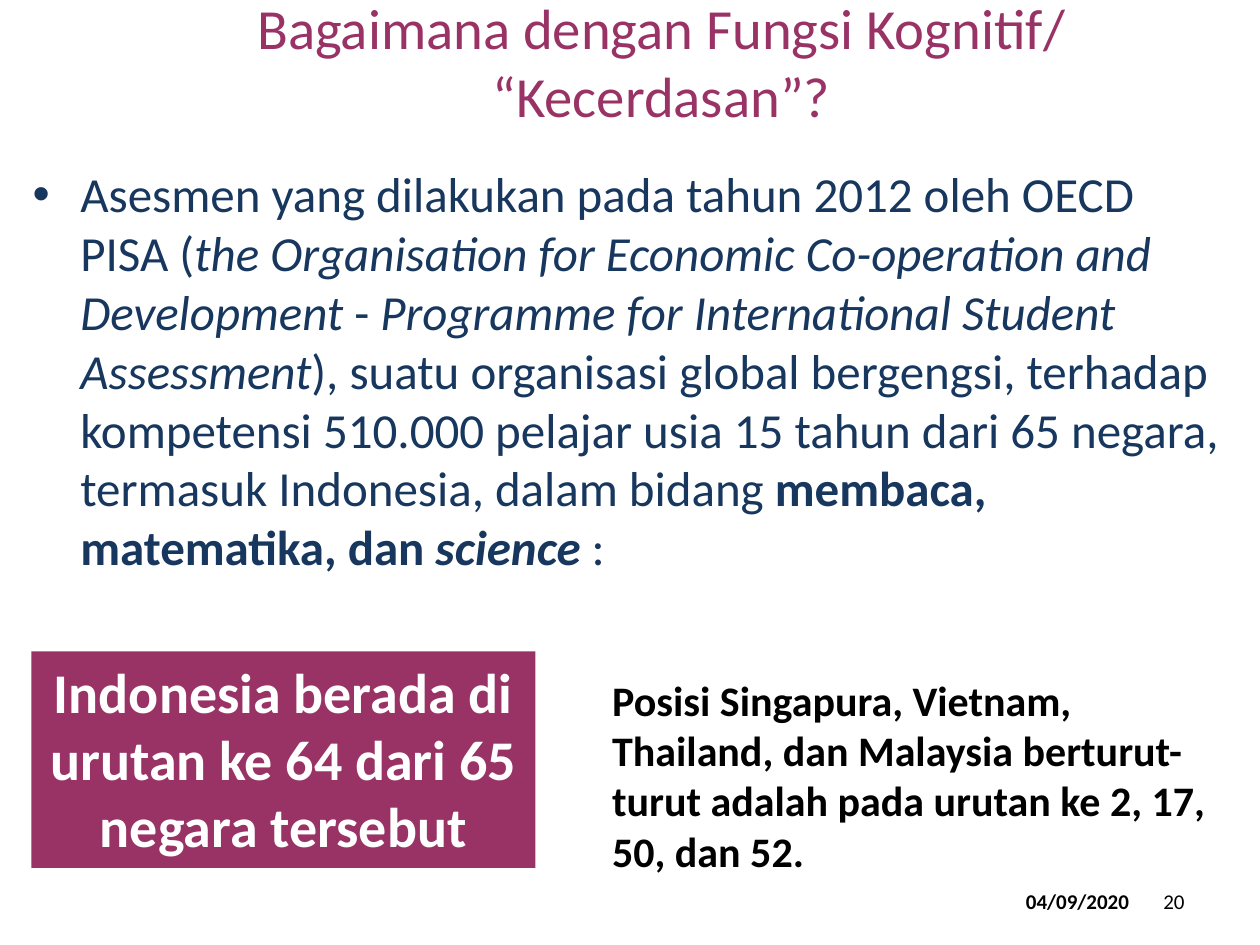
from lxml.etree import SubElement as Sub
from pptx import Presentation
from pptx.dml.color import RGBColor as Rgb
from pptx.enum.shapes import MSO_SHAPE as Kind
from pptx.enum.text import MSO_ANCHOR as Anchor, PP_ALIGN as Align
from pptx.oxml.ns import qn
from pptx.util import Inches, Pt

WIDE, HIGH = Inches(10), Inches(7.5)
PLUM, NAVY, BLACK, WHITE = "993366", "17375E", "000000", "FFFFFF"


def color(code):
    return Rgb.from_string(code)


def place(area):
    x, y, w, h = (share / 100 for share in area)
    return int(x * WIDE), int(y * HIGH), int(w * WIDE), int(h * HIGH)


def style(run, size, tint, bold=False, slant=False):
    font = run.font
    font.name, font.size = "Calibri", Pt(size)
    font.bold, font.italic = bold, slant
    font.color.rgb = color(tint)


def write(shape, text, size, tint, bold=False, align=Align.LEFT, anchor=Anchor.TOP):
    frame = shape.text_frame
    frame.word_wrap = True
    frame.vertical_anchor = anchor
    frame.text = text
    for line in frame.paragraphs:
        line.alignment = align
        for run in line.runs:
            style(run, size, tint, bold)


def label(slide, area, *text, **look):
    write(slide.shapes.add_textbox(*place(area)), *text, **look)


def panel(slide, area, fill):
    shape = slide.shapes.add_shape(Kind.RECTANGLE, *place(area))
    shape.shadow.inherit = False
    shape.fill.solid()
    shape.fill.fore_color.rgb = color(fill)
    shape.line.fill.background()
    return shape


def bullet(shape, parts, size, tint):
    frame = shape.text_frame
    frame.word_wrap = True
    frame.vertical_anchor = Anchor.TOP
    line = frame.paragraphs[0]
    line.alignment = Align.LEFT
    props = line._p.get_or_add_pPr()
    indent = Inches(0.38)
    props.set("marL", str(indent))
    props.set("indent", str(-indent))
    Sub(props, qn("a:buFont"), typeface="Arial")
    Sub(props, qn("a:buChar"), char="•")
    for text, bold, slant in parts:
        run = line.add_run()
        run.text = text
        style(run, size, tint, bold, slant)


def main():
    deck = Presentation()
    deck.slide_width, deck.slide_height = WIDE, HIGH
    slide = deck.slides.add_slide(deck.slide_layouts[6])

    label(slide, (5, 2.27, 95, 8.27), "Bagaimana dengan Fungsi Kognitif/\v“Kecerdasan”?",
          32.4, PLUM, align=Align.CENTER, anchor=Anchor.MIDDLE)

    parts = [
        ("Asesmen yang dilakukan pada tahun 2012 oleh OECD PISA (", False, False),
        ("the Organisation for Economic Co-operation and Development", False, True),
        (" - ", False, False),
        ("Programme for International Student Assessment", False, True),
        ("), suatu organisasi global bergengsi, terhadap kompetensi 510.000 pelajar "
         "usia 15 tahun dari 65 negara, termasuk Indonesia, dalam bidang ", False, False),
        ("membaca, matematika, dan ", True, False),
        ("science ", True, True),
        (":", False, False),
    ]
    bullet(panel(slide, (1.6, 16.67, 96.9, 52.27), WHITE), parts, 28, NAVY)

    write(panel(slide, (2.5, 68.93, 40, 22.93), PLUM),
          "Indonesia berada di urutan ke 64 dari 65 negara tersebut",
          32, WHITE, bold=True, align=Align.CENTER)
    label(slide, (47.6, 70.67, 50.8, 28.27),
          "Posisi Singapura, Vietnam, Thailand, dan Malaysia berturut-turut "
          "adalah pada urutan ke 2, 17, 50, dan 52.", 24, BLACK, bold=True)

    for left, text, bold in ((67.3, "04/09/2020", True), (71.7, "20", False)):
        label(slide, (left, 92.67, 23.3, 5.33), text, 12, BLACK, bold=bold,
              align=Align.RIGHT, anchor=Anchor.MIDDLE)

    deck.save("out.pptx")


if __name__ == "__main__":
    main()
